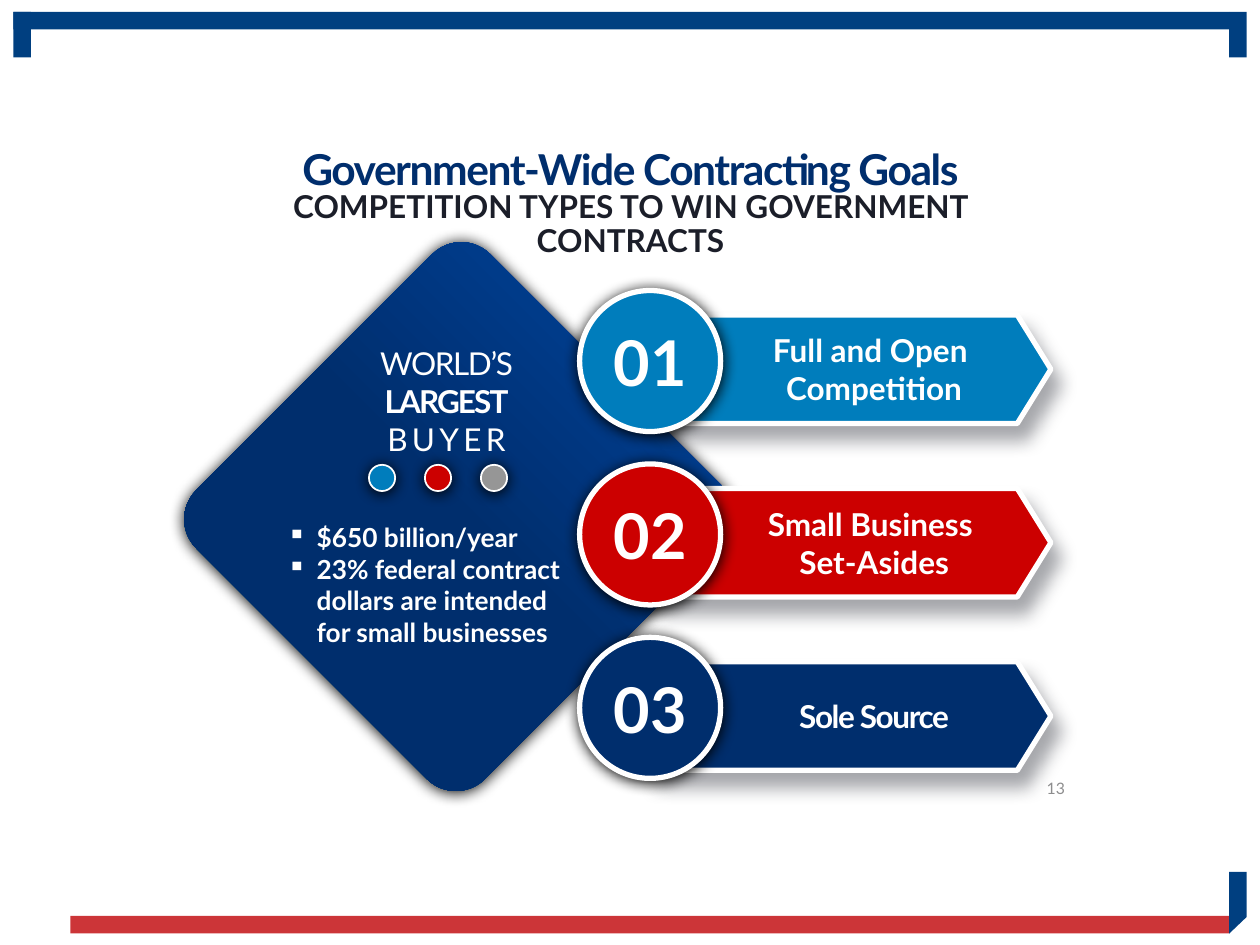
from pptx import Presentation
from pptx.dml.color import RGBColor
from pptx.enum.shapes import MSO_SHAPE as SHAPE
from pptx.enum.text import MSO_ANCHOR as ANCHOR, PP_ALIGN as ALIGN
from pptx.oxml import parse_xml
from pptx.oxml.ns import nsdecls, qn
from pptx.util import Pt

FRAME_BLUE = RGBColor(0x00, 0x3F, 0x80)
FRAME_RED = RGBColor(0xCC, 0x35, 0x38)
NAVY = RGBColor(0x00, 0x2E, 0x6D)
BRIGHT_NAVY = RGBColor(0x00, 0x48, 0xA8)
BLUE = RGBColor(0x00, 0x7D, 0xBC)
RED = RGBColor(0xCC, 0x00, 0x00)
GREY = RGBColor(0x96, 0x96, 0x96)
INK = RGBColor(0x1B, 0x1E, 0x29)
PAGE_GREY = RGBColor(0x8D, 0x8D, 0x8E)
WHITE = RGBColor(0xFF, 0xFF, 0xFF)
BLACK = RGBColor(0x00, 0x00, 0x00)

# Shadow: colour, opacity %, blur, distance, angle
GLOW = (BLACK, 100, 8.5, 1, 90)
CAST = (INK, 39, 10, 10, 60)


def add_shadow(sp, color, opacity, blur, dist, angle):
    sp.shadow.inherit = False
    effects = sp._element.spPr.find(qn("a:effectLst"))
    effects.append(parse_xml(
        f'<a:outerShdw {nsdecls("a")} blurRad="{Pt(blur)}" dist="{Pt(dist)}" '
        f'dir="{angle * 60000}" algn="ctr" rotWithShape="0">'
        f'<a:srgbClr val="{color}"><a:alpha val="{opacity * 1000}"/></a:srgbClr>'
        '</a:outerShdw>'))


def paint(sp, fill, line=0, shadow=None):
    sp.fill.solid()
    sp.fill.fore_color.rgb = fill
    if line:
        sp.line.color.rgb = WHITE
        sp.line.width = Pt(line)
    else:
        sp.line.fill.background()
    sp.shadow.inherit = False
    if shadow:
        add_shadow(sp, *shadow)


def add_shape(s, kind, box, fill, line=0, shadow=None):
    sp = s.shapes.add_shape(kind, *map(Pt, box))
    paint(sp, fill, line, shadow)
    return sp


def write(sp, lines, size, color=WHITE, bold=True, align=ALIGN.CENTER,
          anchor=ANCHOR.MIDDLE, spacing=None):
    tf = sp.text_frame
    tf.word_wrap = True
    tf.vertical_anchor = anchor
    tf.text = "\n".join(lines)
    for p in tf.paragraphs:
        p.alignment = align
        p.line_spacing = spacing
        for r in p.runs:
            r.font.name = "Lato"
            r.font.size = Pt(size)
            r.font.bold = bold
            r.font.color.rgb = color
    return tf


def add_text(s, box, lines, size, **style):
    return write(s.shapes.add_textbox(*map(Pt, box)), lines, size, **style)


def track(p, points):
    """Set the letter spacing of a paragraph."""
    for r in p.runs:
        r._r.get_or_add_rPr().set("spc", str(round(points * 100)))


def indent(p, left, hanging=0, bullet=None):
    pPr = p._p.get_or_add_pPr()
    pPr.set("marL", str(Pt(left)))
    pPr.set("indent", str(-Pt(hanging)))
    if bullet:
        pPr.append(parse_xml(f'<a:buChar {nsdecls("a")} char="{bullet}"/>'))


def add_frame(s):
    for box, color in (((7.6, 6.8, 694.8, 10), FRAME_BLUE),
                       ((702.4, 6.8, 10, 26), FRAME_BLUE),
                       ((7.6, 6.8, 10, 26), FRAME_BLUE),
                       ((40.2, 523.4, 662.4, 10), FRAME_RED)):
        add_shape(s, SHAPE.RECTANGLE, box, color)
    # Cut corner at bottom right
    left, right, top = Pt(702.4), Pt(712.4), Pt(498.2)
    fb = s.shapes.build_freeform(left, top)
    fb.add_line_segments([(right, top), (right, Pt(524)), (left, Pt(533.5))])
    paint(fb.convert_to_shape(), FRAME_BLUE)


def add_headings(s):
    title = s.shapes.title
    title.left, title.top, title.width, title.height = map(Pt, (127.4, 80.6, 465.8, 35.3))
    tf = write(title, ["Government-Wide Contracting Goals"], 24.3, NAVY, spacing=0.9)
    track(tf.paragraphs[0], -0.8)
    add_text(s, (127.4, 105.8, 465.8, 41), ["COMPETITION TYPES TO WIN GOVERNMENT CONTRACTS"],
             18, color=INK, anchor=ANCHOR.TOP, spacing=0.9)


def add_diamond(s):
    sp = add_shape(s, SHAPE.ROUNDED_RECTANGLE, (145.4, 176.4, 233.3, 237.6), NAVY, shadow=GLOW)
    sp.rotation = 45
    sp.adjustments[0] = 0.1
    stops = "".join(f'<a:gs pos="{pos * 1000}"><a:srgbClr val="{color}"/></a:gs>'
                    for pos, color in ((0, NAVY), (50, NAVY), (100, BRIGHT_NAVY)))
    spPr = sp._element.spPr
    spPr.replace(spPr.find(qn("a:solidFill")), parse_xml(
        f'<a:gradFill {nsdecls("a")} rotWithShape="0"><a:gsLst>{stops}</a:gsLst>'
        '<a:path path="circle"><a:fillToRect t="100000" r="100000"/></a:path></a:gradFill>'))


def add_buyer(s):
    tf = add_text(s, (198.7, 193, 113, 72.7), ["WORLD’S", "LARGEST", "BUYER"], 18,
                  bold=False, anchor=ANCHOR.TOP)
    for p, points in zip(tf.paragraphs, (-0.8, -1.1, 2.5)):
        track(p, points)
    tf.paragraphs[1].runs[0].font.bold = True
    # Row of dots
    for i, color in enumerate((BLUE, RED, GREY)):
        add_shape(s, SHAPE.OVAL, (210.8 + 32 * i, 265.6, 15, 15), color, 1, GLOW)
    # Facts
    tf = add_text(s, (157, 294.5, 184.3, 96.5),
                  ["$650 billion/year",
                   "23% federal contract dollars are intended for small businesses"],
                  15, align=ALIGN.LEFT, anchor=ANCHOR.TOP)
    for p in tf.paragraphs:
        indent(p, 16.9, 16.9, "▪")


def add_competition(s, i, color, lines):
    y = 166 + 99.1 * i
    arrow = add_shape(s, SHAPE.CHEVRON, (371.5, y + 14, 229, 62), color, 3, CAST)
    arrow.adjustments[0] = 0.31
    tf = write(arrow, lines, 18)
    for p in tf.paragraphs:
        indent(p, 27)
        if len(lines) == 1:
            track(p, -0.8)
    circle = add_shape(s, SHAPE.OVAL, (331.2, y, 80.6, 80.6), color, 3, GLOW)
    write(circle, [f"{i + 1:02}"], 36)


def main():
    prs = Presentation()
    prs.slide_width, prs.slide_height = Pt(720), Pt(540)
    s = prs.slides.add_slide(prs.slide_layouts[5])
    add_frame(s)
    add_headings(s)
    add_diamond(s)
    add_buyer(s)
    competitions = ((BLUE, ["Full and Open ", "Competition"]),
                    (RED, ["Small Business ", "Set-Asides"]),
                    (NAVY, ["Sole Source"]))
    for i, (color, lines) in enumerate(competitions):
        add_competition(s, i, color, lines)
    # Page number
    add_text(s, (493.9, 439.9, 121.7, 21.6), ["13"], 9, color=PAGE_GREY,
             bold=False, align=ALIGN.RIGHT)
    prs.save("out.pptx")


if __name__ == "__main__":
    main()
